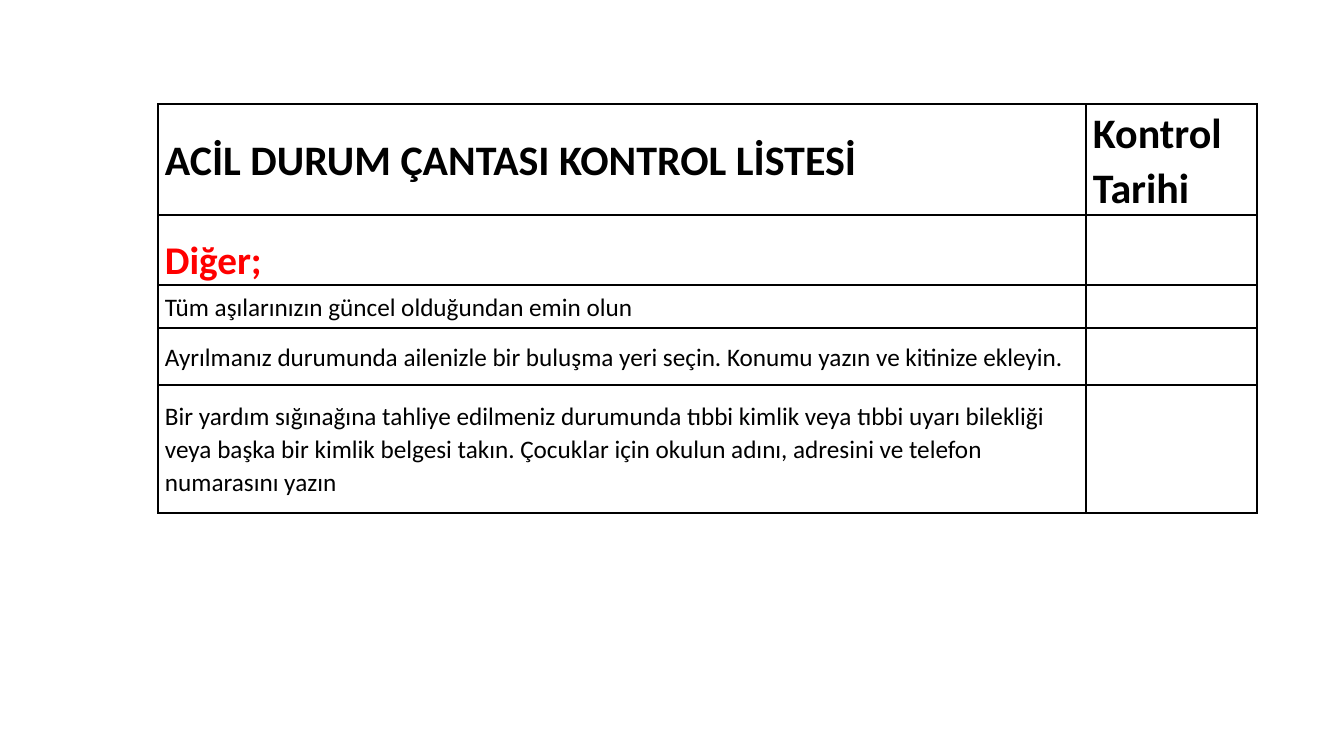
from dataclasses import dataclass

from lxml.etree import SubElement
from pptx import Presentation
from pptx.dml.color import RGBColor as Rgb
from pptx.enum.text import MSO_ANCHOR as Anchor
from pptx.oxml.ns import qn
from pptx.util import Emu, Pt

EMU_PER_PX = 914400 / 100.8


@dataclass(frozen=True)
class Theme:
    """Colours, type sizes and line weights of the slide."""
    font: str = "Calibri"
    ink: str = "000000"
    accent: str = "FF0000"
    paper: str = "FFFFFF"
    header: int = 30
    section: int = 28
    body: int = 18
    spacing: float = 1.07
    border: int = 1


THEME = Theme()
COLUMN_WIDTHS = (928, 171)
ROW_HEIGHTS = (111, 70, 43, 57, 128)
SIDE_MARGIN = 7
HEADINGS = ("ACİL DURUM ÇANTASI KONTROL LİSTESİ", "Kontrol Tarihi")
SECTION = "Diğer;"
TASKS = (
    "Tüm aşılarınızın güncel olduğundan emin olun",
    "Ayrılmanız durumunda ailenizle bir buluşma yeri seçin. "
    "Konumu yazın ve kitinize ekleyin.",
    "Bir yardım sığınağına tahliye edilmeniz durumunda tıbbi kimlik veya tıbbi "
    "uyarı bilekliği veya başka bir kimlik belgesi takın. Çocuklar için okulun "
    "adını, adresini ve telefon numarasını yazın",
)


def px(length):
    """Turn whole pixels into EMU."""
    return Emu(round(length * EMU_PER_PX))


def draw_borders(cell):
    """Rule all four sides of a cell."""
    properties = cell._tc.get_or_add_tcPr()
    for position, side in enumerate(("a:lnL", "a:lnR", "a:lnT", "a:lnB")):
        rule = SubElement(properties, qn(side), w=str(Pt(THEME.border)))
        paint = SubElement(rule, qn("a:solidFill"))
        SubElement(paint, qn("a:srgbClr"), val=THEME.ink)
        properties.insert(position, rule)


def prepare_cell(cell):
    """Give a cell its fill, margins, anchor and borders."""
    cell.fill.solid()
    cell.fill.fore_color.rgb = Rgb.from_string(THEME.paper)
    cell.margin_left = cell.margin_right = px(SIDE_MARGIN)
    cell.margin_top = cell.margin_bottom = 0
    cell.vertical_anchor = Anchor.MIDDLE
    draw_borders(cell)


def write(cell, wording, size, color=THEME.ink, bold=False):
    """Write one formatted paragraph into a cell."""
    paragraph = cell.text_frame.paragraphs[0]
    paragraph.text = wording
    paragraph.line_spacing = THEME.spacing
    font = paragraph.runs[0].font
    font.name, font.size, font.bold = THEME.font, Pt(size), bold
    font.color.rgb = Rgb.from_string(color)


def add_checklist(slide, left, top):
    """Place the checklist table with its top left corner at the given point."""
    frame = slide.shapes.add_table(
        len(ROW_HEIGHTS), len(COLUMN_WIDTHS), px(left), px(top),
        px(sum(COLUMN_WIDTHS)), px(sum(ROW_HEIGHTS)))
    checklist = frame.table
    checklist.first_row = checklist.horz_banding = False
    for column, width in zip(checklist.columns, COLUMN_WIDTHS):
        column.width = px(width)
    for row, height in zip(checklist.rows, ROW_HEIGHTS):
        row.height = px(height)
    for cell in checklist.iter_cells():
        prepare_cell(cell)

    for column, heading in enumerate(HEADINGS):
        write(checklist.cell(0, column), heading, THEME.header, bold=True)
    section = checklist.cell(1, 0)
    section.vertical_anchor = Anchor.BOTTOM
    write(section, SECTION, THEME.section, THEME.accent, bold=True)
    for row, task in enumerate(TASKS, start=2):
        write(checklist.cell(row, 0), task, THEME.body)


def main():
    """Build and save the checklist slide."""
    deck = Presentation()
    deck.slide_width, deck.slide_height = px(1344), px(756)
    slide = deck.slides.add_slide(deck.slide_layouts[6])
    add_checklist(slide, 158, 104)
    deck.save("out.pptx")


if __name__ == "__main__":
    main()
